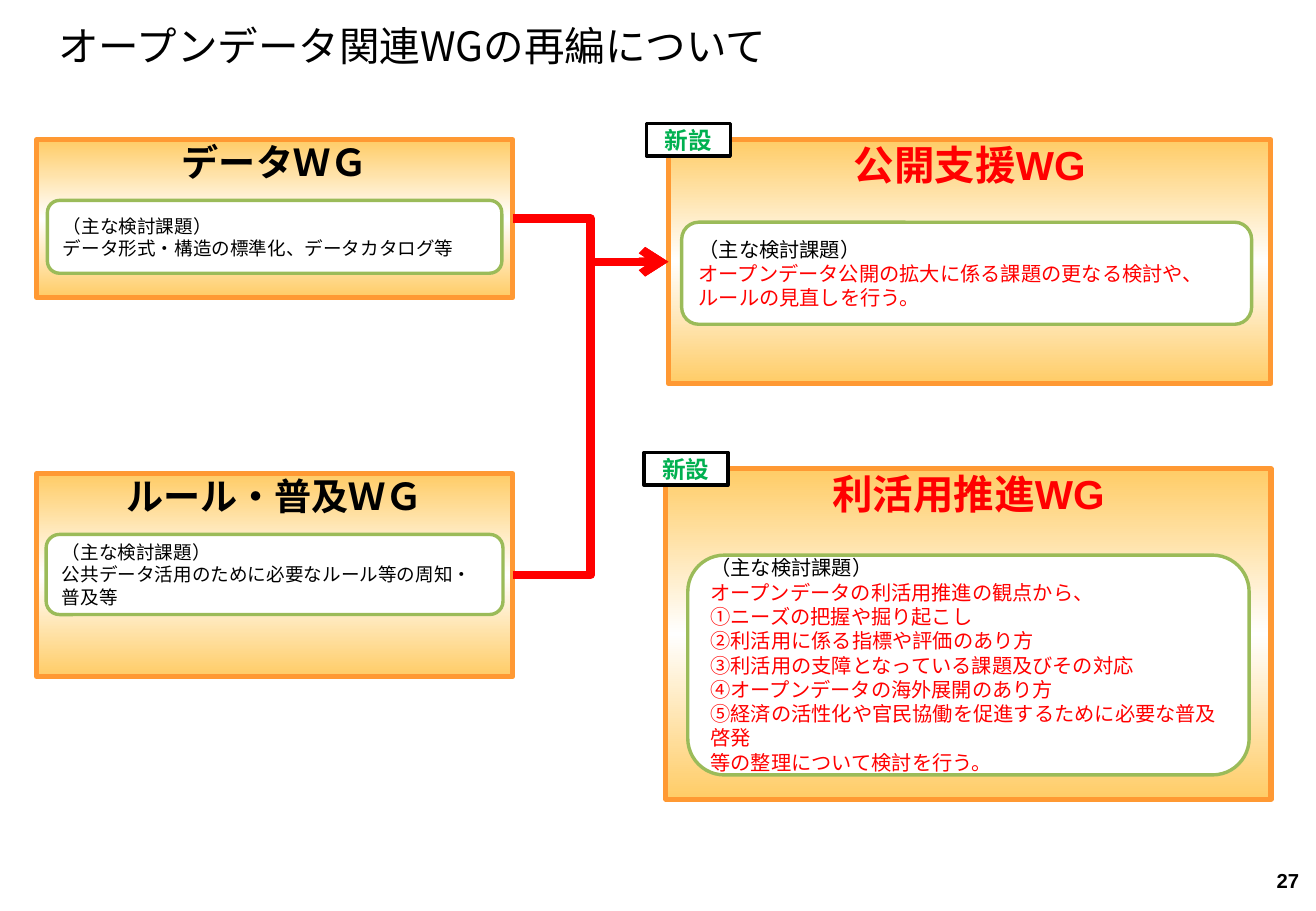
from copy import deepcopy

from lxml import etree
from pptx import Presentation
from pptx.dml.color import RGBColor
from pptx.enum.shapes import MSO_CONNECTOR, MSO_SHAPE
from pptx.enum.text import MSO_ANCHOR, MSO_AUTO_SIZE, PP_ALIGN
from pptx.oxml.ns import qn
from pptx.util import Inches, Pt

RECTANGLE, ROUNDED = MSO_SHAPE.RECTANGLE, MSO_SHAPE.ROUNDED_RECTANGLE
ELBOW = MSO_CONNECTOR.ELBOW
TOP, MIDDLE = MSO_ANCHOR.TOP, MSO_ANCHOR.MIDDLE
LEFT, CENTER, RIGHT = PP_ALIGN.LEFT, PP_ALIGN.CENTER, PP_ALIGN.RIGHT
NO_FIT = MSO_AUTO_SIZE.NONE
LEFT_SITE, RIGHT_SITE = 1, 3

BLACK = RGBColor(0x00, 0x00, 0x00)
WHITE = RGBColor(0xFF, 0xFF, 0xFF)
RED = RGBColor(0xFF, 0x00, 0x00)
ORANGE = RGBColor(0xFF, 0x99, 0x33)
AMBER = RGBColor(0xFF, 0xCC, 0x66)
OLIVE = RGBColor(0x9B, 0xBB, 0x59)
GREEN = RGBColor(0x00, 0xB0, 0x50)

SANS, HEADING, TAG = "Noto Sans CJK JP", "Arial", "Calibri"
COLUMNS, ROWS = 108.3, 75
TASKS = "（主な検討課題）"

CARDS = {
    "data": {
        "box": (3, 11.5, 39.2, 13), "insets": (0.9, 5, 0.9, 2),
        "heading": "データＷＧ", "new": False,
        "tasks": ["データ形式・構造の標準化、データカタログ等"],
    },
    "rules": {
        "box": (3, 39, 39.2, 16.7), "insets": (0.8, 5, 0.8, 5.1),
        "heading": "ルール・普及ＷＧ", "new": False,
        "tasks": ["公共データ活用のために必要なルール等の周知・普及等"],
    },
    "publishing": {
        "box": (55, 11.5, 49.6, 20.1), "insets": (1.1, 6.8, 1.6, 4.9),
        "heading": "公開支援WG", "new": True,
        "tasks": ["オープンデータ公開の拡大に係る課題の更なる検討や、ルールの見直しを行う。"],
    },
    "promotion": {
        "box": (54.8, 38.6, 49.8, 27.2), "insets": (1.8, 7.1, 1.8, 2),
        "heading": "利活用推進WG", "new": True,
        "tasks": [
            "オープンデータの利活用推進の観点から、",
            "①ニーズの把握や掘り起こし",
            "②利活用に係る指標や評価のあり方",
            "③利活用の支障となっている課題及びその対応",
            "④オープンデータの海外展開のあり方",
            "⑤経済の活性化や官民協働を促進するために必要な普及啓発",
            "等の整理について検討を行う。",
        ],
    },
}


def cells(*counts):
    """Turn grid cells of a tenth of an inch into lengths."""
    return [Inches(count / 10) for count in counts]


def apply(target, values):
    """Set every attribute named in a dict of format values."""
    for name, value in values.items():
        setattr(target, name, value)


def write(shape, lines, size, font, bold=False, align=LEFT, anchor=MIDDLE, padding=(1, 0.4)):
    """Fill a shape with (text, colour) paragraphs."""
    side, edge = cells(*padding)
    frame = shape.text_frame
    apply(frame, {
        "word_wrap": True, "auto_size": NO_FIT, "vertical_anchor": anchor,
        "margin_left": side, "margin_right": side,
        "margin_top": edge, "margin_bottom": edge,
    })
    for index, (text, color) in enumerate(lines):
        paragraph = frame.add_paragraph() if index else frame.paragraphs[0]
        paragraph.alignment = align
        run = paragraph.add_run()
        run.text = text
        apply(run.font, {"size": Pt(size), "bold": bold, "name": font})
        run.font.color.rgb = color
        properties = run.font._element
        etree.SubElement(properties, qn("a:ea")).set("typeface", font)


def add_panel(slide, kind, box, line_color, line_width):
    """Draw a white outlined shape in a box of grid cells."""
    shape = slide.shapes.add_shape(kind, *cells(*box))
    shape.shadow.inherit = False
    shape.fill.solid()
    shape.fill.fore_color.rgb = WHITE
    shape.line.color.rgb = line_color
    shape.line.width = Pt(line_width)
    return shape


def shade(shape):
    """Give a shape the amber, white, amber vertical gradient."""
    shape.fill.gradient()
    shape.fill.gradient_angle = 90
    stop_list = shape._element.spPr.find(qn("a:gradFill")).find(qn("a:gsLst"))
    stop_list.insert(1, deepcopy(stop_list[0]))
    for stop, color, position in zip(shape.fill.gradient_stops, (AMBER, WHITE, AMBER), (0, 0.5, 1)):
        stop.color.rgb = color
        stop.position = position


def add_card(slide, box, insets, heading, tasks, new):
    """Draw one working group with its tasks and, if new, its tag."""
    left, top, width, height = box
    inset_left, inset_top, inset_right, inset_bottom = insets
    color = RED if new else BLACK
    card = add_panel(slide, RECTANGLE, box, ORANGE, 3)
    shade(card)
    write(card, [(heading, color)], 24 if new else 22, HEADING, True, CENTER, TOP, (1, 0))
    inner = (left + inset_left, top + inset_top,
             width - inset_left - inset_right, height - inset_top - inset_bottom)
    panel = add_panel(slide, ROUNDED, inner, OLIVE, 2)
    lines = [(TASKS, BLACK)] + [(task, color) for task in tasks]
    write(panel, lines, 12 if new else 11, SANS)
    if new:
        tag = add_panel(slide, RECTANGLE, (left - 1.8, top - 1.35, 6.9, 2.7), BLACK, 2)
        write(tag, [("新設", GREEN)], 14, TAG, True, CENTER, padding=(0, 0))
    return card


def add_arrow(slide, source, target):
    """Join two cards with a red elbow arrow."""
    connector = slide.shapes.add_connector(
        ELBOW, source.left + source.width, source.top + source.height // 2,
        target.left, target.top + target.height // 2)
    connector.begin_connect(source, RIGHT_SITE)
    connector.end_connect(target, LEFT_SITE)
    connector.line.color.rgb = RED
    connector.line.width = Pt(5)
    properties = connector._element.spPr
    outline = properties.find(qn("a:ln"))
    etree.SubElement(outline, qn("a:round"))
    etree.SubElement(outline, qn("a:tailEnd")).set("type", "arrow")
    etree.SubElement(properties, qn("a:effectLst"))


def add_title(slide, box):
    """Place the slide title in its placeholder."""
    title = slide.shapes.title
    apply(title, dict(zip(("left", "top", "width", "height"), cells(*box))))
    write(title, [("オープンデータ関連WGの再編について", BLACK)], 24, SANS, padding=(1, 0.5))


def add_page_number(slide, box):
    """Place the page number at the lower right."""
    number = slide.shapes.add_textbox(*cells(*box))
    write(number, [("27", BLACK)], 12, HEADING, True, RIGHT, padding=(1, 0.5))


def main():
    """Build and save the slide."""
    presentation = Presentation()
    width, height = cells(COLUMNS, ROWS)
    apply(presentation, {"slide_width": width, "slide_height": height})
    slide = presentation.slides.add_slide(presentation.slide_layouts[5])
    add_title(slide, (3.8, 0.6, 97.5, 6.2))
    cards = {name: add_card(slide, **card) for name, card in CARDS.items()}
    for source in ("rules", "data"):
        add_arrow(slide, cards[source], cards["publishing"])
    add_page_number(slide, (82.6, 70.5, 25.3, 4))
    presentation.save("out.pptx")


if __name__ == "__main__":
    main()
